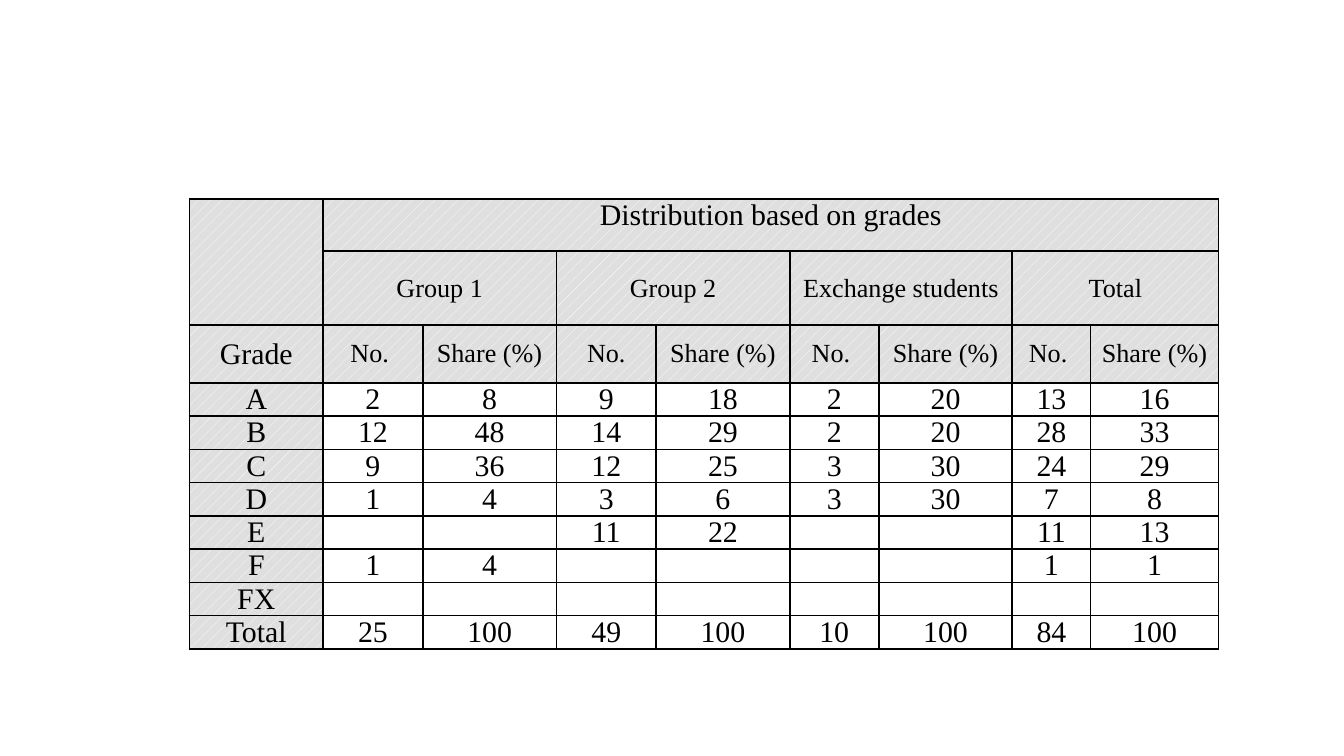
"""Build a slide with the table of grades by student group."""
from dataclasses import dataclass

from lxml import etree
from pptx import Presentation
from pptx import util as u
from pptx.dml.color import RGBColor
from pptx.enum import dml, text
from pptx.oxml import ns

FONT = "Times New Roman"
BLACK, WHITE, GRAY = "000000", "FFFFFF", "DFDFDF"
WIDTH = 7.66
COLS = [0.99, 0.74, 0.99, 0.74, 0.99, 0.66, 0.99, 0.58, 0.95]
ROWS = [0.39, 0.55, 0.43] + [0.22] * 8
GROUPS = ["Group 1", "Group 2", "Exchange students", "Total"]
COUNTS = ["No. ", "No.", "No. ", "No. "]


@dataclass
class Grade:
    name: str
    marks: str

    def texts(self) -> list[str]:
        return [self.name] + self.marks.split("|")


GRADES = [
    Grade("A", "2|8|9|18|2|20|13|16"),
    Grade("B", "12|48|14|29|2|20|28|33"),
    Grade("C", "9|36|12|25|3|30|24|29"),
    Grade("D", "1|4|3|6|3|30|7|8"),
    Grade("E", "||11|22|||11|13"),
    Grade("F", "1|4|||||1|1"),
    Grade("FX", "|||||||"),
    Grade("Total", "25|100|49|100|10|100|84|100"),
]


def color(code: str) -> RGBColor:
    return RGBColor.from_string(code)


def border(cell) -> None:
    props = cell._tc.get_or_add_tcPr()
    for side in ("lnL", "lnR", "lnT", "lnB"):
        line = etree.SubElement(props, ns.qn(f"a:{side}"), w=str(u.Pt(1)))
        fill = etree.SubElement(line, ns.qn("a:solidFill"))
        etree.SubElement(fill, ns.qn("a:srgbClr"), val=BLACK)


def shade(cell, head: bool) -> None:
    if not head:
        cell.fill.background()
        return
    cell.fill.patterned()
    cell.fill.pattern = dml.MSO_PATTERN.PERCENT_20
    cell.fill.fore_color.rgb = color(WHITE)
    cell.fill.back_color.rgb = color(GRAY)


def write(cell, words: str, size: int, middle: bool) -> None:
    cell.margin_left = cell.margin_right = u.Inches(0.07)
    cell.margin_top = cell.margin_bottom = 0
    if middle:
        cell.vertical_anchor = text.MSO_ANCHOR.MIDDLE
    para = cell.text_frame.paragraphs[0]
    para.alignment = text.PP_ALIGN.CENTER
    if not words:
        end = etree.SubElement(para._p, ns.qn("a:endParaRPr"), sz=str(size * 100))
        etree.SubElement(end, ns.qn("a:latin"), typeface=FONT)
        return
    run = para.add_run()
    run.text = words
    run.font.name = FONT
    run.font.size = u.Pt(size)
    run.font.color.rgb = color(BLACK)


def grid() -> list[list[str]]:
    top = ["", "Distribution based on grades"] + [""] * 7
    groups, heads = [""], ["Grade"]
    for group, count in zip(GROUPS, COUNTS):
        groups += [group, ""]
        heads += [count, "Share (%)"]
    return [top, groups, heads] + [grade.texts() for grade in GRADES]


def draw(slide) -> None:
    frame = slide.shapes.add_table(
        len(ROWS), len(COLS), u.Inches(1.41), u.Inches(1.48),
        u.Inches(WIDTH), u.Inches(sum(ROWS)))
    table = frame.table
    table.first_row = table.horz_banding = False
    for col, width in zip(table.columns, COLS):
        col.width = u.Inches(width * WIDTH / sum(COLS))
    for row, height in zip(table.rows, ROWS):
        row.height = u.Inches(height)
    for i, line in enumerate(grid()):
        for j, words in enumerate(line):
            cell = table.cell(i, j)
            small = i in (1, 2) and j > 0
            border(cell)
            shade(cell, i < 3 or j == 0)
            write(cell, words, 14 if small else 16, i in (1, 2))
    table.cell(0, 0).merge(table.cell(1, 0))
    table.cell(0, 1).merge(table.cell(0, 8))
    for j in range(1, len(COLS), 2):
        table.cell(1, j).merge(table.cell(1, j + 1))


def main() -> None:
    deck = Presentation()
    deck.slide_width = u.Inches(10)
    deck.slide_height = deck.slide_width * 9 // 16
    draw(deck.slides.add_slide(deck.slide_layouts[6]))
    deck.save("out.pptx")


if __name__ == "__main__":
    main()
